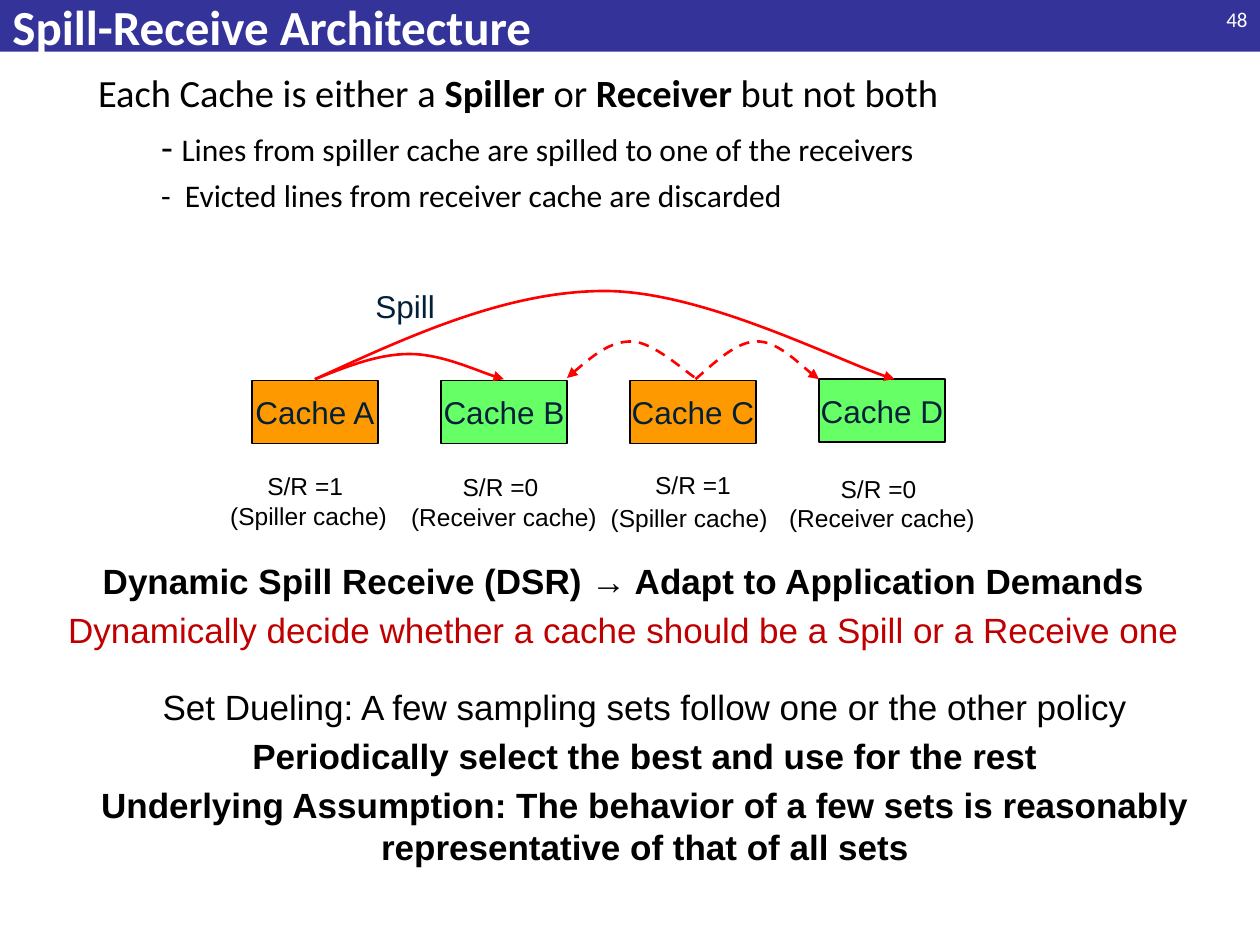
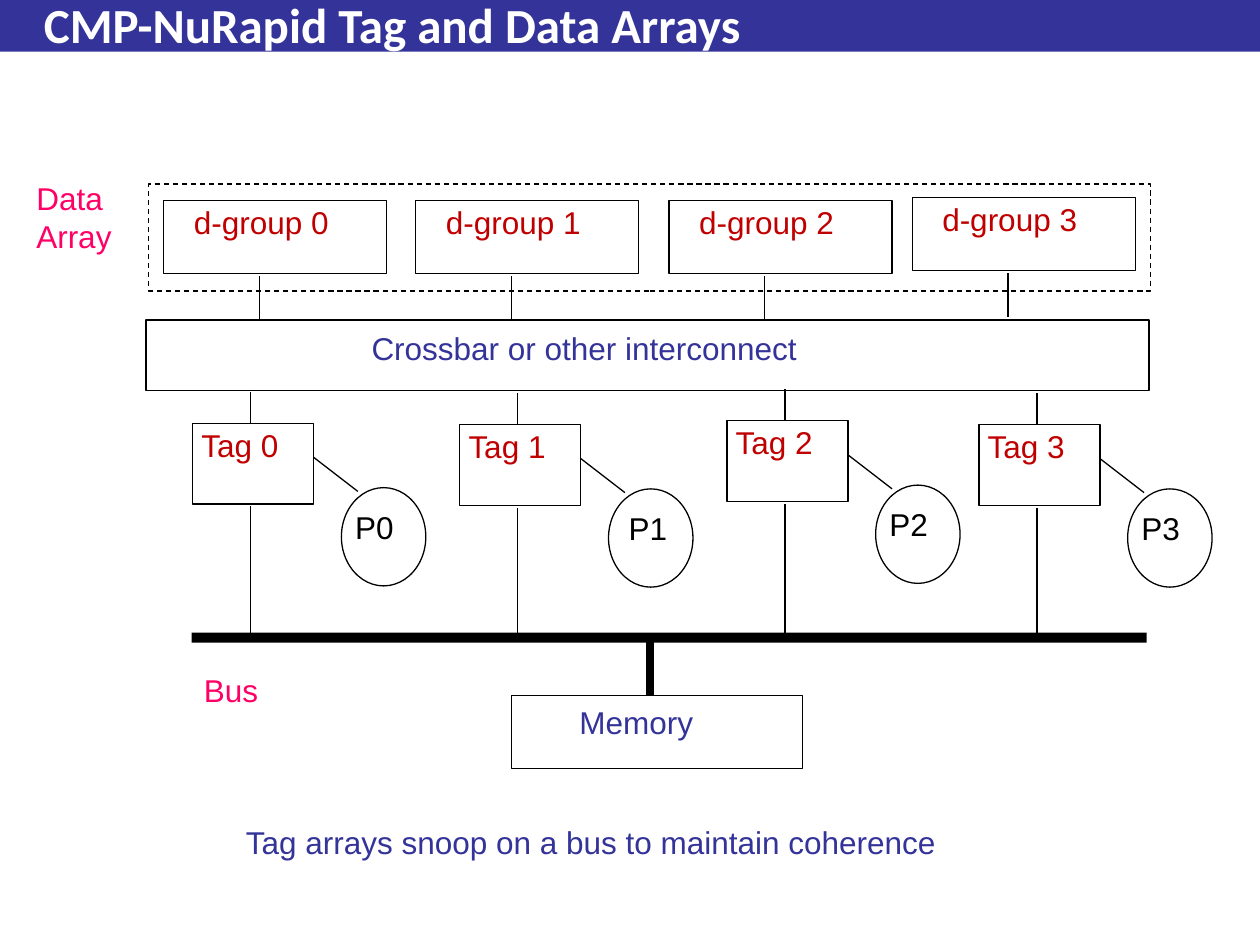
from dataclasses import dataclass, field
from typing import Any, NamedTuple

from lxml.etree import SubElement
from pptx import Presentation
from pptx.dml.color import RGBColor
from pptx.enum.dml import MSO_LINE
from pptx.enum.shapes import MSO_CONNECTOR, MSO_SHAPE
from pptx.enum.text import MSO_ANCHOR, MSO_AUTO_SIZE as FIT, PP_ALIGN
from pptx.oxml.ns import qn
from pptx.util import Inches, Pt

WHITE, BLACK, NAVY, INK = "FFFFFF", "000000", "333399", "02203A"
RED, DARK_RED, PINK = "FF0000", "C00000", "FF0066"
ORANGE, GREEN = "FF9900", "66FF66"
SANS, HEAD = "Arial", "Calibri"
LEFT, MID, RIGHT = PP_ALIGN.LEFT, PP_ALIGN.CENTER, PP_ALIGN.RIGHT
WIDE, SLIM = (0.1, 0.05), (0.07, 0.04)  # text insets: sides, top and bottom

Point = tuple[float, float]


class Box(NamedTuple):
    x: float
    y: float
    w: float
    h: float


class Span(NamedTuple):
    """A run of text; None keeps the format of the whole text."""
    text: str
    size: float | None = None
    bold: bool | None = None
    color: str | None = None


@dataclass
class Para:
    spans: list[Span]
    gap: float = 0  # points before the paragraph
    left: float = 0  # indent in inches


@dataclass
class Text:
    paras: list[Para]
    size: float = 18
    color: str = BLACK
    font: str = SANS
    bold: bool = False
    align: Any = LEFT
    inset: Point = WIDE
    frame: dict[str, Any] = field(default_factory=dict)


@dataclass
class Pen:
    color: str = BLACK
    width: float = 0.75
    dash: bool = False


@dataclass
class Arc:
    """Cubic curve: a start point, then three points for each piece."""
    points: list[Point]
    dash: bool = False
    tip: str = "tailEnd"


THIN = Pen()
GROW = {"word_wrap": False, "auto_size": FIT.SHAPE_TO_FIT_TEXT}
FLOW = {"word_wrap": True, "auto_size": FIT.SHAPE_TO_FIT_TEXT}
FIXED = {"word_wrap": True, "auto_size": FIT.NONE}


def rgb(code: str) -> RGBColor:
    return RGBColor.from_string(code)


def put(target: Any, values: dict[str, Any]) -> None:
    for name, value in values.items():
        setattr(target, name, value)


def lines(*texts: str) -> list[Para]:
    return [Para([Span(text)]) for text in texts]


def write(shape: Any, text: Text) -> None:
    frame = shape.text_frame
    side, edge = map(Inches, text.inset)
    put(frame, {"margin_left": side, "margin_right": side,
                "margin_top": edge, "margin_bottom": edge, **text.frame})
    for i, para in enumerate(text.paras):
        p = frame.add_paragraph() if i else frame.paragraphs[0]
        put(p, {"alignment": text.align, "space_before": Pt(para.gap)})
        if para.left:
            p._p.get_or_add_pPr().set("marL", str(Inches(para.left)))
        for span in para.spans:
            run = p.add_run()
            run.text = span.text
            put(run.font, {
                "name": text.font, "size": Pt(span.size or text.size),
                "bold": text.bold if span.bold is None else span.bold})
            run.font.color.rgb = rgb(span.color or text.color)


def label(slide: Any, box: Box, text: Text) -> None:
    write(slide.shapes.add_textbox(*map(Inches, box)), text)


def note(slide: Any, x: float, y: float, w: float, h: float, color: str, *texts: str) -> None:
    """Left-aligned text that does not wrap."""
    label(slide, Box(x, y, w, h), Text(lines(*texts), color=color, frame=GROW))


def ink(target: Any, pen: Pen) -> None:
    target.line.color.rgb = rgb(pen.color)
    target.line.width = Pt(pen.width)
    if pen.dash:
        target.line.dash_style = MSO_LINE.DASH


def block(slide: Any, box: Box, fill: str | None = None, pen: Pen | None = THIN,
          kind: Any = MSO_SHAPE.RECTANGLE) -> Any:
    shape = slide.shapes.add_shape(kind, *map(Inches, box))
    shape.shadow.inherit = False
    if fill:
        shape.fill.solid()
        shape.fill.fore_color.rgb = rgb(fill)
    else:
        shape.fill.background()
    if pen:
        ink(shape, pen)
    else:
        shape.line.fill.background()
    return shape


def link(slide: Any, start: Point, end: Point, pen: Pen = THIN) -> None:
    wire = slide.shapes.add_connector(MSO_CONNECTOR.STRAIGHT, *map(Inches, start + end))
    ink(wire, pen)
    SubElement(wire._element.spPr, qn("a:effectLst"))


def bend(shape: Any) -> None:
    """Turn each three straight pieces of the outline into one cubic piece."""
    legs = list(shape._element.iter(qn("a:lnTo")))
    route = legs[0].getparent()
    for i in range(0, len(legs), 3):
        cubic = SubElement(route, qn("a:cubicBezTo"))
        for leg in legs[i:i + 3]:
            cubic.append(leg[0])
            route.remove(leg)


def curve(slide: Any, arc: Arc) -> None:
    first, *rest = [(Inches(x), Inches(y)) for x, y in arc.points]
    pen = slide.shapes.build_freeform(*first)
    pen.add_line_segments(rest, close=False)
    shape = pen.convert_to_shape()
    bend(shape)
    shape.shadow.inherit = False
    shape.fill.background()
    ink(shape, Pen(RED, 1.5, arc.dash))
    SubElement(shape.line._get_or_add_ln(), qn(f"a:{arc.tip}"), type="triangle")


def start(deck: Any, title: str, box: Box) -> Any:
    """New slide with the top band and its title."""
    slide = deck.slides.add_slide(deck.slide_layouts[6])
    block(slide, Box(0, 0, 10, 0.41), NAVY, None)
    label(slide, box, Text(lines(title), 28, WHITE, HEAD, True,
                           frame={**FIXED, "vertical_anchor": MSO_ANCHOR.MIDDLE}))
    return slide


class Cache(NamedTuple):
    name: str
    top: float
    spills: bool
    tag: Box


CACHES = [
    Cache("A", 3.02, True, Box(1.72, 3.7, 1.46, 0.53)),
    Cache("B", 3.02, False, Box(3.18, 3.71, 1.64, 0.53)),
    Cache("C", 3.02, True, Box(4.74, 3.69, 1.52, 0.57)),
    Cache("D", 3.01, False, Box(6.18, 3.72, 1.64, 0.53)),
]
ARCS = [
    Arc([(2.5, 3.01), (2.75, 2.91), (3, 2.81), (3.25, 2.81),
         (3.5, 2.81), (3.87, 2.98), (4, 3.01)]),
    Arc([(2.5, 3.01), (3.26, 2.66), (4.03, 2.31), (4.8, 2.31),
         (5.57, 2.31), (6.72, 2.9), (7.1, 3.01)]),
    Arc([(5.52, 3.01), (5.69, 2.86), (5.85, 2.71), (6.01, 2.71),
         (6.17, 2.71), (6.42, 2.96), (6.5, 3.01)], True),
    Arc([(4.5, 3), (4.67, 2.85), (4.84, 2.71), (5.01, 2.71),
         (5.18, 2.71), (5.44, 2.95), (5.52, 3)], True, "headEnd"),
]


def draw_cache(slide: Any, i: int, cache: Cache) -> None:
    shape = block(slide, Box(2 + 1.5 * i, cache.top, 1, 0.5),
                  ORANGE if cache.spills else GREEN, Pen(width=1))
    write(shape, Text(lines(f"Cache {cache.name}"), color=INK, align=MID, inset=SLIM,
                      frame={"word_wrap": False, "vertical_anchor": MSO_ANCHOR.MIDDLE}))
    last = cache.name == "C"
    role = "Spiller" if cache.spills else "Receiver"
    paras = lines(f"S/R ={int(cache.spills)}" + ("" if last else " "), f"({role} cache)")
    if last:
        paras[1].spans.append(Span(" ", 16))
    label(slide, cache.tag, Text(paras, 14, align=MID, inset=SLIM, frame=GROW))


def spill_slide(deck: Any) -> None:
    slide = start(deck, "Spill-Receive Architecture", Box(0, 0, 8.38, 0.41))
    label(slide, Box(9.58, 0, 0.42, 0.33),
          Text(lines("48"), 12, WHITE, HEAD, align=RIGHT, frame=FIXED))
    label(slide, Box(0.68, 0.5, 8.81, 1.37), Text([
        Para([Span("Each Cache is either a "), Span("Spiller ", bold=True), Span("or "),
              Span("Receiver", bold=True), Span(" but not both")]),
        Para([Span("- "), Span("Lines from spiller cache are spilled to one of the receivers",
                               18)], 4.4, 0.5),
        Para([Span("-  Evicted lines from receiver cache are discarded", 18)], 3.6, 0.5),
    ], 22, font=HEAD, frame=FIXED))
    for i, cache in enumerate(CACHES):
        draw_cache(slide, i, cache)
    for arc in ARCS:
        curve(slide, arc)
    label(slide, Box(2.89, 2.24, 0.65, 0.37),
          Text(lines("Spill"), color=INK, align=MID, inset=SLIM, frame=GROW))
    claims = [
        (Box(0.25, 4.4, 9.4, 0.81), [
            Span("Dynamic Spill Receive (DSR) → Adapt to Application Demands", bold=True),
            Span("Dynamically decide whether a cache should be a Spill or a Receive one",
                 color=DARK_RED)]),
        (Box(0.42, 5.4, 9.4, 1.55), [
            Span("Set Dueling: A few sampling sets follow one or the other policy"),
            Span("Periodically select the best and use for the rest", bold=True),
            Span("Underlying Assumption: The behavior of a few sets is reasonably "
                 "representative of that of all sets", bold=True)]),
    ]
    for box, spans in claims:
        paras = [Para([span], 4 if i else 0) for i, span in enumerate(spans)]
        label(slide, box, Text(paras, 20, align=MID, inset=SLIM, frame=FLOW))


GROUPS = [(1.3, 1.59), (3.3, 1.59), (5.31, 1.59), (7.24, 1.57)]
TAGS = [(1.53, 3.36), (3.65, 3.37), (5.77, 3.34), (7.77, 3.37)]


def draw_group(slide: Any, i: int, x: float, y: float) -> None:
    block(slide, Box(x, y, 1.77, 0.58))
    link(slide, (x + 0.76, y + 0.6), (x + 0.76, y + 0.95))
    note(slide, x + 0.14, y - 0.03, 1.28, 0.4, DARK_RED, f"d-group {i}")


def draw_tag(slide: Any, i: int, x: float, y: float) -> None:
    """Tag array with its core and its wires to crossbar and bus."""
    block(slide, Box(x, y, 0.96, 0.64))
    block(slide, Box(x + 1.18, y + 0.51, 0.67, 0.78), kind=MSO_SHAPE.OVAL)
    nudge = 0.05 if i == 1 else 0
    note(slide, x + 1.19 + nudge, y + 0.62, 0.61, 0.5, BLACK, f"P{i}")
    link(slide, (x + 0.96, y + 0.27), (x + 1.31, y + 0.54))
    for top, end in ((-0.25, 0), (0.66, 1.7)):
        link(slide, (x + 0.46, y + top), (x + 0.46, y + end))
    note(slide, x - 0.03, y - 0.03, 0.82, 0.4, DARK_RED, f"Tag {i}")


def array_slide(deck: Any) -> None:
    slide = start(deck, "CMP-NuRapid Tag and Data Arrays", Box(0.25, 0.05, 9.25, 0.28))
    label(slide, Box(0.41, 6.48, 8.56, 0.5),
          Text(lines("Tag arrays snoop on a bus to maintain coherence"),
               color=NAVY, align=MID, frame=FLOW))
    note(slide, 0.19, 1.37, 1, 0.98, PINK, "Data", "Array")
    block(slide, Box(1.52, 5.02, 7.58, 0.08), BLACK, None)
    block(slide, Box(4.06, 5.52, 2.31, 0.58))
    note(slide, 4.5, 5.53, 1.11, 0.4, NAVY, "Memory")
    block(slide, Box(1.16, 2.54, 7.96, 0.56))
    note(slide, 2.85, 2.56, 3.68, 0.4, NAVY, "Crossbar or other interconnect")
    block(slide, Box(1.18, 1.46, 7.95, 0.85), pen=Pen(dash=True))
    link(slide, (5.16, 5.08), (5.16, 5.52), Pen(width=4.5))
    note(slide, 1.52, 5.28, 0.78, 0.5, PINK, "Bus")
    for i, (group, tag) in enumerate(zip(GROUPS, TAGS)):
        draw_group(slide, i, *group)
        draw_tag(slide, i, *tag)


def main() -> None:
    deck = Presentation()
    put(deck, {"slide_width": Inches(10), "slide_height": Inches(7.5)})
    spill_slide(deck)
    array_slide(deck)
    deck.save("out.pptx")


if __name__ == "__main__":
    main()
